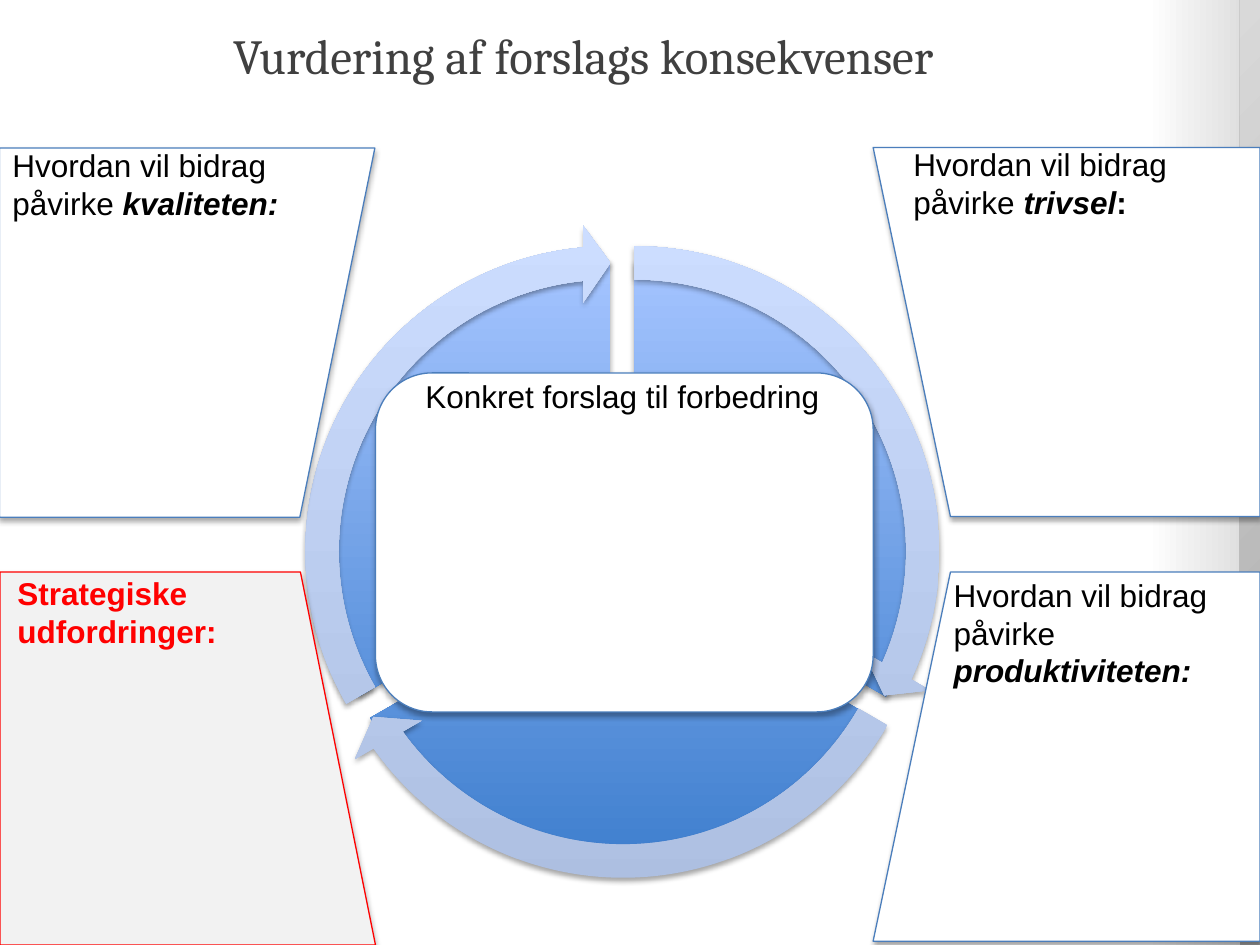
import lxml.etree
import pptx
import pptx.dml.color
import pptx.enum.shapes
import pptx.enum.text
import pptx.oxml
import pptx.oxml.ns
import pptx.util
from pptx.util import Inches

MSO = pptx.enum.shapes.MSO_SHAPE
ALIGN = pptx.enum.text.PP_ALIGN
qn = pptx.oxml.ns.qn
rgb = pptx.dml.color.RGBColor.from_string


def set_gradient(fill, start, end, angle):
    fill.gradient()
    fill.gradient_angle = angle
    for stop, colour in zip(fill.gradient_stops, (start, end)):
        stop.color.rgb = rgb(colour)


def add_shadow(s):
    s.shadow.inherit = False
    effects = s._element.spPr.find(qn("a:effectLst"))
    effects.append(pptx.oxml.parse_xml(
        f'<a:outerShdw {pptx.oxml.ns.nsdecls("a")} blurRad="39370" dist="22860"'
        ' dir="5400000" rotWithShape="0">'
        '<a:srgbClr val="000000"><a:alpha val="35000"/></a:srgbClr></a:outerShdw>'))


prs = pptx.Presentation()
prs.slide_width, prs.slide_height = Inches(10), Inches(7.5)
slide = prs.slides.add_slide(prs.slide_layouts[5])

# Background fading to grey at the right edge
fill = slide.background.fill
set_gradient(fill, "FFFFFF", "D9D9D9", 0)
fill.gradient_stops[0].position = 0.91
fill.gradient_stops[1].position = 1
end_colour = list(slide._element.iter(qn("a:srgbClr")))[-1]
lxml.etree.SubElement(end_colour, qn("a:alpha")).set("val", "50000")

# Side band, shaded outwards from its top left corner
band = slide.shapes.add_shape(MSO.RECTANGLE, Inches(9.84), 0, Inches(0.16), Inches(7.5))
set_gradient(band.fill, "D9D9D9", "A6A6A6", 0)
lin = next(band._element.iter(qn("a:lin")))
radial = lxml.etree.Element(qn("a:path"), {"path": "circle"})
lxml.etree.SubElement(radial, qn("a:fillToRect"), {"r": "100000", "b": "100000"})
lin.getparent().replace(lin, radial)
band.line.fill.background()
band.shadow.inherit = False

# Title
title = slide.shapes.title
title.left, title.top = Inches(1.75), Inches(-0.19)
title.width, title.height = Inches(8.09), Inches(1.25)
tf = title.text_frame
tf.text = "Vurdering af forslags konsekvenser"
tf.vertical_anchor = pptx.enum.text.MSO_ANCHOR.MIDDLE
p = tf.paragraphs[0]
p.alignment = ALIGN.LEFT
font = p.runs[0].font
font.name, font.size = "Cambria", pptx.util.Pt(28)
font.color.rgb = rgb("404040")

# Cycle: three sectors, each with an arrow along its rim
sectors = [
    (2.73, 2.07, (162, 18)),
    (2.63, 2.24, (18, 90)),
    (2.54, 2.07, (90, 162)),
]
arrows = [
    (2.44, 1.78, (0.051, 3.275, 14.725, 161.994, 0.059)),
    (2.35, 1.95, (0.051, 3.275, 86.72, 18.005, 0.059)),
    (2.25, 1.78, (0.051, 3.275, 158.73, 90, 0.059)),
]
cycle = slide.shapes.add_group_shape()
for kind, size, parts, dark, light in [
    (MSO.PIE, 4.61, sectors, "3F7FCE", "A4C4FF"),
    (MSO.CIRCULAR_ARROW, 5.19, arrows, "ADBFE1", "CCDDFF"),
]:
    for x, y, adjustments in parts:
        s = cycle.shapes.add_shape(kind, Inches(x), Inches(y), Inches(size), Inches(size))
        for i, value in enumerate(adjustments):
            s.adjustments[i] = value
        set_gradient(s.fill, dark, light, 90)
        s.line.fill.background()
        add_shadow(s)

# Four corner panels and the central panel
BLUE, RED = "4B7EBC", "FF0000"
CORNER = MSO.FLOWCHART_MANUAL_INPUT
panels = [
    (CORNER, (7, 1.1, 2.93, 3.07), 270, False, "FFFFFF", BLUE),
    (CORNER, (0.01, 4.53, 2.96, 2.98), 90, False, "F2F2F2", RED),
    (CORNER, (0.02, 1.15, 2.93, 2.98), 270, True, "FFFFFF", BLUE),
    (CORNER, (7, 4.47, 2.93, 3.07), 90, True, "FFFFFF", BLUE),
    (MSO.FLOWCHART_ALTERNATE_PROCESS, (2.98, 2.96, 3.95, 2.69), 0, False, "FFFFFF", BLUE),
]
for kind, box, rotation, flipped, colour, outline in panels:
    s = slide.shapes.add_shape(kind, *map(Inches, box))
    s.rotation = rotation
    if flipped:
        s._element.spPr.xfrm.set("flipV", "1")
    s.fill.solid()
    s.fill.fore_color.rgb = rgb(colour)
    s.line.color.rgb = rgb(outline)
    s.line.width = pptx.util.Pt(0.75)
    add_shadow(s)

# Panel texts: runs are (text, bold, italic)
question = ("Hvordan vil bidrag påvirke ", False, False)
texts = [
    ((7.15, 1.1, 2.7, 0.71), ALIGN.LEFT, "000000",
     [question, ("trivsel", True, True), (":", True, False)]),
    ((0, 1.11, 2.7, 0.71), ALIGN.LEFT, "000000", [question, ("kvaliteten:", True, True)]),
    ((7.47, 4.52, 2.53, 1.61), ALIGN.LEFT, "000000",
     [question, ("produktiviteten:", True, True)]),
    ((0.04, 4.51, 2.46, 1.31), ALIGN.LEFT, RED, [("Strategiske udfordringer:", True, False)]),
    ((3.1, 2.94, 3.68, 1.01), ALIGN.CENTER, "000000",
     [("Konkret forslag til forbedring", False, False)]),
]
for box, alignment, colour, runs in texts:
    tf = slide.shapes.add_textbox(*map(Inches, box)).text_frame
    tf.word_wrap = True
    p = tf.paragraphs[0]
    p.alignment = alignment
    for text, bold, italic in runs:
        r = p.add_run()
        r.text = text
        r.font.name, r.font.size = "Arial", pptx.util.Pt(18)
        r.font.bold, r.font.italic = bold, italic
        r.font.color.rgb = rgb(colour)

prs.save("out.pptx")
